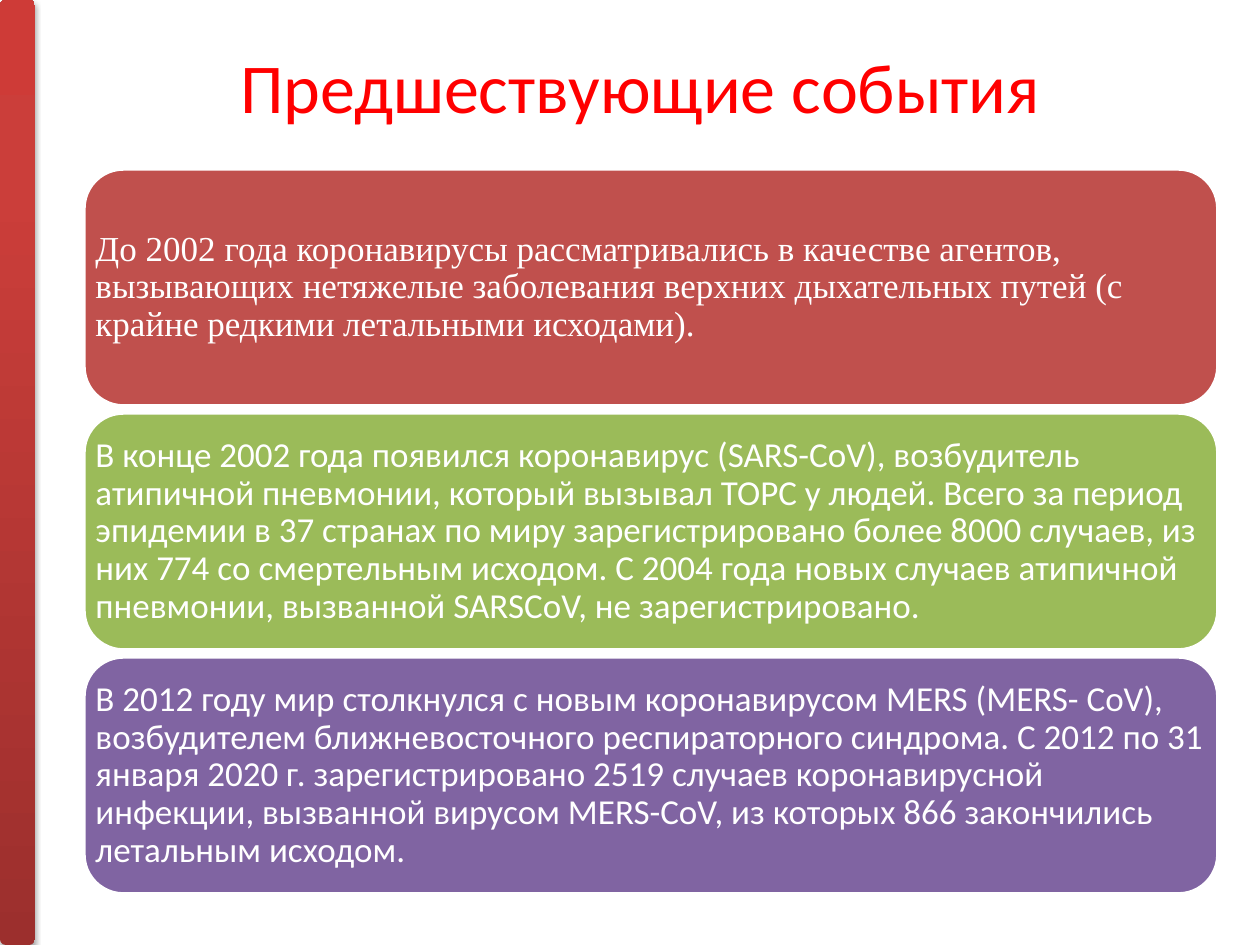
"""Build the slide on events preceding the 2019 coronavirus outbreak."""
import copy

import pptx
import pptx.dml.color
import pptx.enum.shapes
import pptx.enum.text
import pptx.oxml
import pptx.oxml.ns
import pptx.util

RGB = pptx.dml.color.RGBColor
RED = RGB(0xFF, 0x00, 0x00)
WHITE = RGB(0xFF, 0xFF, 0xFF)
BRICK = RGB(0xC0, 0x50, 0x4D)
GREEN = RGB(0x9B, 0xBB, 0x59)
PURPLE = RGB(0x80, 0x64, 0xA2)
BAR_STOPS = [
    (0, RGB(0x9C, 0x2F, 0x2D)),
    (0.8, RGB(0xCB, 0x3E, 0x3A)),
    (1, RGB(0xCE, 0x3B, 0x37)),
]

HEADING = "Предшествующие события "
EVENTS = [
    (BRICK, "Times New Roman",
     "До 2002 года коронавирусы рассматривались в качестве агентов, "
     "вызывающих нетяжелые заболевания верхних дыхательных путей "
     "(с крайне редкими летальными исходами)."),
    (GREEN, "Calibri",
     "В конце 2002 года появился коронавирус (SARS-CoV), возбудитель "
     "атипичной пневмонии, который вызывал ТОРС у людей. Всего за период "
     "эпидемии в 37 странах по миру зарегистрировано более 8000 случаев, "
     "из них 774 со смертельным исходом. С 2004 года новых случаев "
     "атипичной пневмонии, вызванной SARSCoV, не зарегистрировано."),
    (PURPLE, "Calibri",
     "В 2012 году мир столкнулся с новым коронавирусом MERS (MERS- CoV), "
     "возбудителем ближневосточного респираторного синдрома. С 2012 по 31 "
     "января 2020 г. зарегистрировано 2519 случаев коронавирусной инфекции, "
     "вызванной вирусом MERS-CoV, из которых 866 закончились летальным "
     "исходом."),
]

SCALE = 914400 / 126
SLIDE_W, SLIDE_H = 1260, 945
BAR_W = 35
HEADING_BOX = (81, 6, 1134, 158)
EVENT_X, EVENT_Y, EVENT_W, EVENT_H, EVENT_GAP = 84, 169, 1134, 237, 7

FRAME_FORMAT = {
    "word_wrap": True,
    "vertical_anchor": pptx.enum.text.MSO_ANCHOR.MIDDLE,
}
EVENT_MARGINS = {
    "margin_left": 0, "margin_right": 0, "margin_top": 0, "margin_bottom": 0,
}
BAR_SHADOW = (
    f"<a:effectLst {pptx.oxml.ns.nsdecls('a')}>"
    '<a:outerShdw blurRad="40000" dist="23000" dir="5400000" rotWithShape="0">'
    '<a:srgbClr val="000000"><a:alpha val="35000"/></a:srgbClr>'
    "</a:outerShdw></a:effectLst>"
)


def px(length):
    return pptx.util.Emu(round(length * SCALE))


def apply(target, values):
    for name, value in values.items():
        setattr(target, name, value)


def write(frame, text, align, spacing, **font):
    apply(frame, FRAME_FORMAT)
    paragraph = frame.paragraphs[0]
    apply(paragraph, {"alignment": align, "line_spacing": spacing})
    run = paragraph.add_run()
    run.text = text
    run.font.color.rgb = font.pop("color")
    apply(run.font, font)


def add_rounded(slide, *box):
    rounded = slide.shapes.add_shape(
        pptx.enum.shapes.MSO_SHAPE.ROUNDED_RECTANGLE, *map(px, box))
    rounded.shadow.inherit = False
    return rounded


def add_bar(slide):
    bar = add_rounded(slide, 0, 0, BAR_W, SLIDE_H)
    bar.line.fill.background()
    bar.fill.gradient()
    bar.fill.gradient_angle = 90
    last_stop = bar._element.spPr.findall(
        ".//" + pptx.oxml.ns.qn("a:gs"))[-1]
    last_stop.addnext(copy.deepcopy(last_stop))
    for stop, (position, color) in zip(bar.fill.gradient_stops, BAR_STOPS):
        stop.position = position
        stop.color.rgb = color
    effects = bar._element.spPr.find(pptx.oxml.ns.qn("a:effectLst"))
    effects.getparent().replace(effects, pptx.oxml.parse_xml(BAR_SHADOW))


def add_event(slide, index, color, font_name, text):
    top = EVENT_Y + index * (EVENT_H + EVENT_GAP)
    event = add_rounded(slide, EVENT_X, top, EVENT_W, EVENT_H)
    event.fill.solid()
    event.fill.fore_color.rgb = color
    event.line.color.rgb = WHITE
    event.line.width = pptx.util.Pt(2)
    apply(event.text_frame, EVENT_MARGINS)
    write(event.text_frame, text, pptx.enum.text.PP_ALIGN.LEFT, 0.9,
          name=font_name, size=pptx.util.Pt(20), color=WHITE)


def main():
    deck = pptx.Presentation()
    apply(deck, {"slide_width": px(SLIDE_W), "slide_height": px(SLIDE_H)})
    slide = deck.slides.add_slide(deck.slide_layouts[5])
    heading = slide.shapes.title
    apply(heading, dict(zip(("left", "top", "width", "height"),
                            map(px, HEADING_BOX))))
    write(heading.text_frame, HEADING, pptx.enum.text.PP_ALIGN.CENTER, 1.0,
          name="Calibri", size=pptx.util.Pt(40), color=RED)
    add_bar(slide)
    for index, event in enumerate(EVENTS):
        add_event(slide, index, *event)
    deck.save("out.pptx")


if __name__ == "__main__":
    main()
